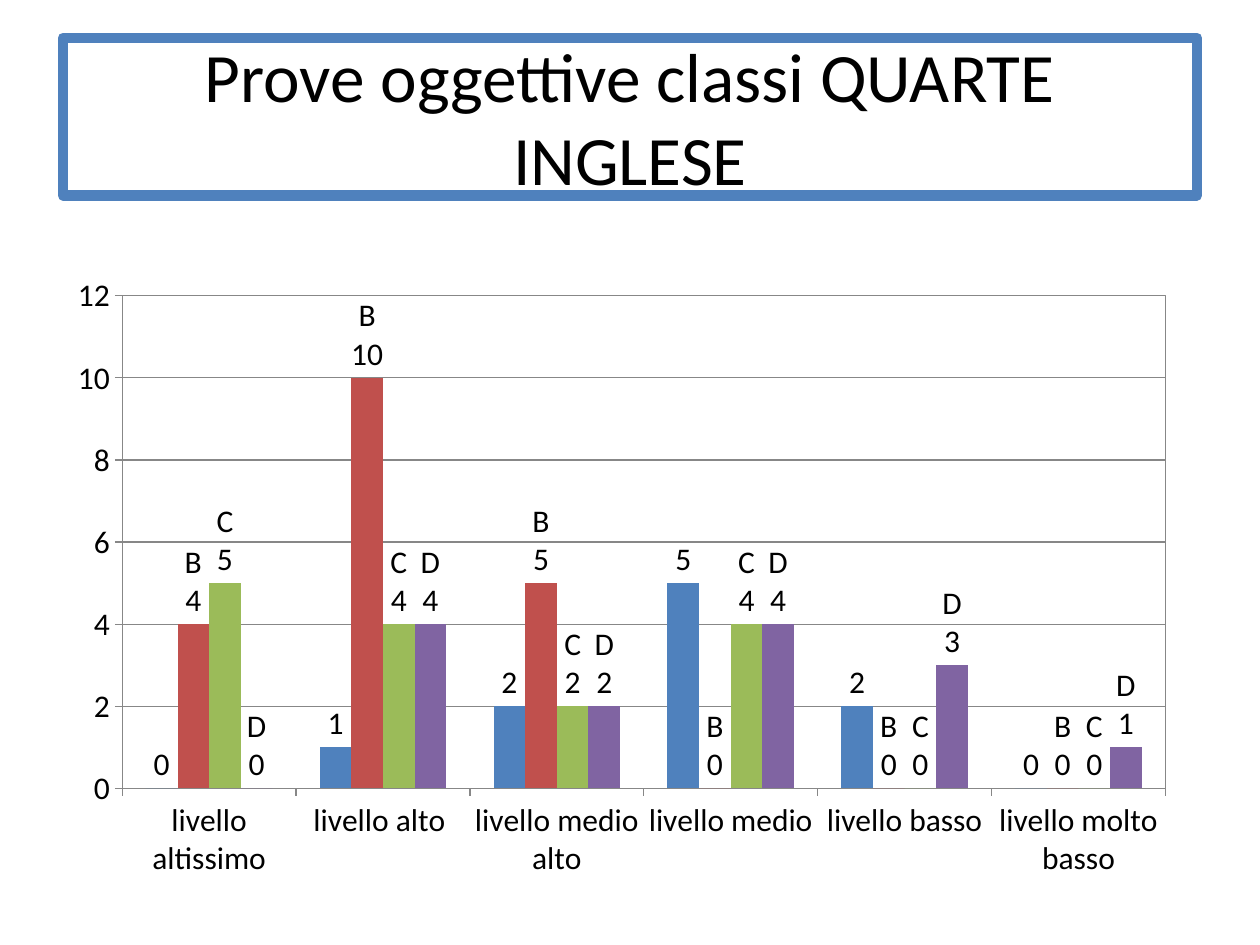
"""Builds a slide charting the English test results of the fourth-year classes."""
from dataclasses import dataclass
from typing import Any

from lxml import etree
from pptx import Presentation
from pptx import util as u
from pptx.chart import data as cd
from pptx.dml.color import RGBColor
from pptx.enum import chart as ch, shapes, text
from pptx.oxml import ns

BLACK = RGBColor(0x00, 0x00, 0x00)
GRAY = RGBColor(0x87, 0x87, 0x87)
BLUE = RGBColor(0x4F, 0x81, 0xBD)
RED = RGBColor(0xC0, 0x50, 0x4D)
GREEN = RGBColor(0x9B, 0xBB, 0x59)
PURPLE = RGBColor(0x80, 0x64, 0xA2)

LEVELS = ["livello altissimo", "livello alto ", "livello medio alto",
          "livello medio", "livello basso", "livello molto basso"]
CLASSES = [
    ("Series 1", (0, 1, 2, 5, 2, 0), BLUE),
    ("B", (4, 10, 5, 0, 0, 0), RED),
    ("C", (5, 4, 2, 4, 0, 0), GREEN),
    ("D", (0, 4, 2, 4, 3, 1), PURPLE),
]
PLOT_AREA = {"x": 0.06, "y": 0.05, "w": 0.92, "h": 0.79}


def apply(obj, values):
    for name, value in values.items():
        setattr(obj, name, value)


def add_xml(parent, tag, **attrs):
    return etree.SubElement(parent, ns.qn(tag), attrs)


@dataclass
class Deck:
    slide: Any
    font: str = "Calibri"
    color: RGBColor = BLACK

    def style(self, font, size):
        apply(font, {"name": self.font, "size": u.Pt(size), "bold": False})
        font.color.rgb = self.color

    def line(self, line, color, width):
        line.color.rgb = color
        line.width = u.Pt(width)

    def title(self, lines, box, size):
        sp = self.slide.shapes.add_shape(shapes.MSO_SHAPE.RECTANGLE, *map(u.Inches, box))
        sp.shadow.inherit = False
        sp.fill.background()
        self.line(sp.line, BLUE, 6)
        add_xml(sp.line._get_or_add_ln(), "a:round")
        tf = sp.text_frame
        apply(tf, {"word_wrap": True, "vertical_anchor": text.MSO_ANCHOR.MIDDLE})
        p = tf.paragraphs[0]
        p.alignment = text.PP_ALIGN.CENTER
        for i, line in enumerate(lines):
            if i:
                p.add_line_break()
            r = p.add_run()
            r.text = line
            self.style(r.font, size)

    def column_chart(self, categories, series, box, size):
        data = cd.CategoryChartData()
        data.categories = categories
        for name, values, _ in series:
            data.add_series(name, values)
        chart = self.slide.shapes.add_chart(
            ch.XL_CHART_TYPE.COLUMN_CLUSTERED, *map(u.Inches, box), data).chart
        apply(chart, {"has_legend": False, "has_title": False})
        self.style(chart.font, size)
        plot = chart.plots[0]
        apply(plot, {"gap_width": 150, "overlap": 0, "vary_by_categories": False})
        for ser, (_, _, color) in zip(plot.series, series):
            self.series(ser, color, size, named=color != BLUE)
        self.axes(chart)
        self.plot_area(chart)

    def series(self, ser, color, size, named):
        ser.format.fill.solid()
        ser.format.fill.fore_color.rgb = color
        ser.invert_if_negative = False
        labels = ser.data_labels
        apply(labels, {"show_value": True, "show_series_name": named,
                       "position": ch.XL_LABEL_POSITION.OUTSIDE_END})
        self.style(labels.font, size)
        if named:
            sep = etree.Element(ns.qn("c:separator"))
            sep.text = "\n"
            labels._element.find(ns.qn("c:showBubbleSize")).addnext(sep)

    def axes(self, chart):
        for axis in (chart.category_axis, chart.value_axis):
            apply(axis, {"major_tick_mark": ch.XL_TICK_MARK.OUTSIDE,
                         "minor_tick_mark": ch.XL_TICK_MARK.NONE,
                         "has_major_gridlines": axis is chart.value_axis})
            self.line(axis.format.line, GRAY, 0.75)
        axis = chart.value_axis
        apply(axis, {"minimum_scale": 0, "maximum_scale": 12, "major_unit": 2})
        self.line(axis.major_gridlines.format.line, GRAY, 0.75)

    def plot_area(self, chart):
        area = chart._chartSpace.chart.plotArea
        for old in area.findall(ns.qn("c:layout")):
            area.remove(old)
        layout = etree.Element(ns.qn("c:layout"))
        area.insert(0, layout)
        manual = add_xml(layout, "c:manualLayout")
        add_xml(manual, "c:layoutTarget", val="inner")
        for side in "xy":
            add_xml(manual, f"c:{side}Mode", val="edge")
        for side, share in PLOT_AREA.items():
            add_xml(manual, f"c:{side}", val=str(share))
        props = add_xml(area, "c:spPr")
        add_xml(props, "a:noFill")
        fill = add_xml(add_xml(props, "a:ln", w=str(u.Pt(0.75))), "a:solidFill")
        add_xml(fill, "a:srgbClr", val=str(GRAY))


def main():
    prs = Presentation()
    apply(prs, {"slide_width": u.Inches(10), "slide_height": u.Inches(7.5)})
    deck = Deck(prs.slides.add_slide(prs.slide_layouts[6]))
    deck.title(["Prove oggettive classi QUARTE", "INGLESE"], (0.5, 0.3, 9, 1.25), 39.6)
    deck.column_chart(LEVELS, CLASSES, (0.43, 2.1, 9, 4.95), 18)
    prs.save("out.pptx")


if __name__ == "__main__":
    main()
